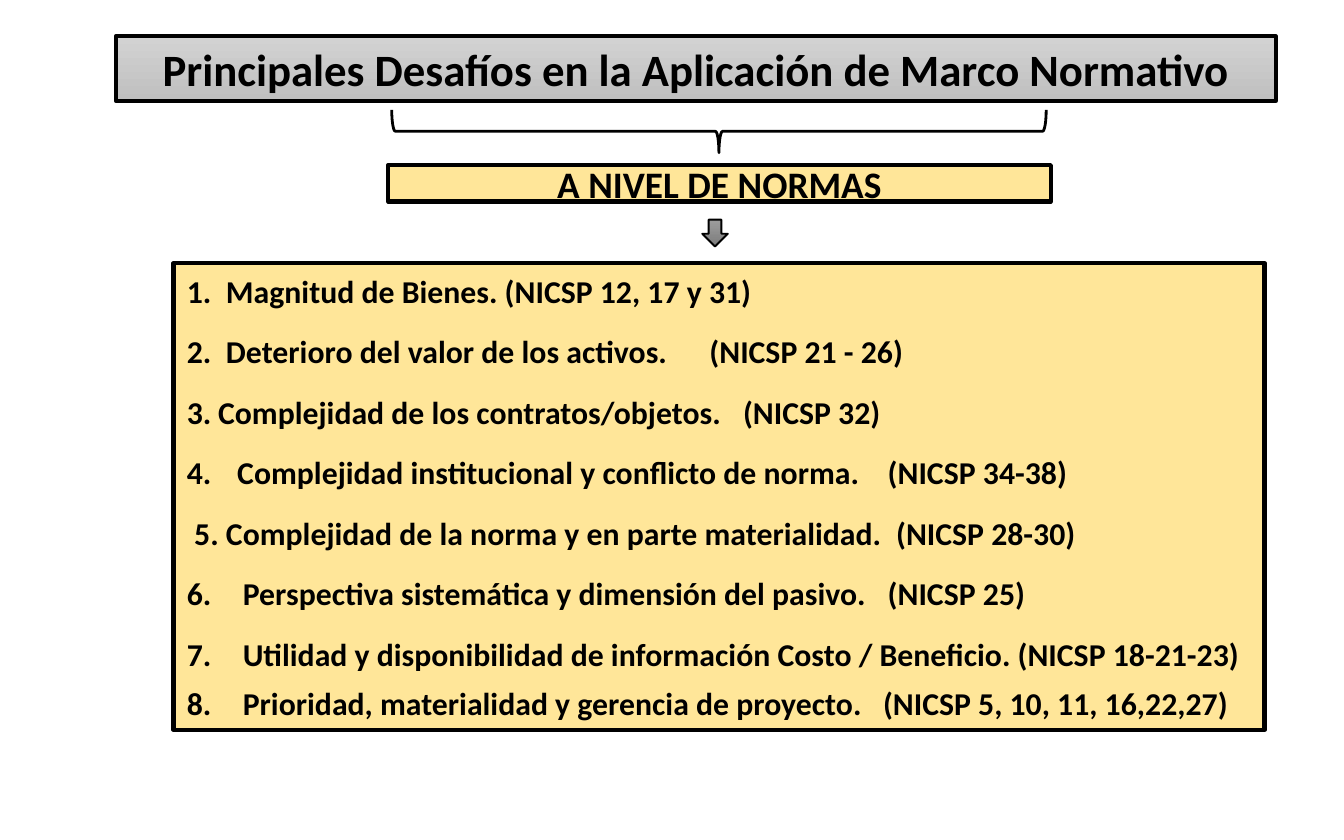
import pptx
import pptx.util
import pptx.dml.color
import pptx.enum.shapes
import pptx.enum.text
from lxml import etree

Pt = pptx.util.Pt
SHAPE = pptx.enum.shapes.MSO_SHAPE
ALIGN = pptx.enum.text.PP_ALIGN
DRAWING_NS = "{http://schemas.openxmlformats.org/drawingml/2006/main}"

BLACK, CREAM = "000000", "FFE699"
BAR_GRADIENT = ("D2D2D2", "C0C0C0")
ARROW_GRADIENT = ("9D9D9D", "7C7C7C")

TITLE = "Principales Desafíos en la Aplicación de Marco Normativo"
LEVEL = "A NIVEL DE NORMAS"
# Each group: text indent, number offset, then (challenge, standards, tab stop or None, space after)
CHALLENGE_GROUPS = [
    (21, 0, [
        ("Magnitud de Bienes.", "(NICSP 12, 17 y 31)", None, 12),
        ("Deterioro del valor de los activos.", "(NICSP 21 - 26)", 280, 12),
    ]),
    (16.75, 0, [("Complejidad de los contratos/objetos.", "(NICSP 32)", 298, 12)]),
    (27, 0, [("Complejidad institucional y conflicto de norma.", "(NICSP 34-38)", 375.5, 12)]),
    (21, 4, [("Complejidad de la norma y en parte materialidad.", "(NICSP 28-30)", 380, 12)]),
    (30, 0, [
        ("Perspectiva sistemática y dimensión del pasivo.", "(NICSP 25)", 375.5, 12),
        ("Utilidad y disponibilidad de información Costo / Beneficio.", "(NICSP 18-21-23)", None, 6),
        ("Prioridad, materialidad y gerencia de proyecto.", "(NICSP 5, 10, 11, 16,22,27)", 373, 6),
    ]),
]


def rgb(color):
    return pptx.dml.color.RGBColor.from_string(color)


def paint(shape, fill=None, line_width=2.25):
    """Fill with a hex colour, a (top, bottom) gradient or nothing, and outline in black."""
    if fill is None:
        shape.fill.background()
    elif isinstance(fill, str):
        shape.fill.solid()
        shape.fill.fore_color.rgb = rgb(fill)
    else:
        shape.fill.gradient()
        shape.fill.gradient_angle = 270
        for stop, color in zip(shape.fill.gradient_stops, fill):
            stop.color.rgb = rgb(color)
    shape.line.color.rgb = rgb(BLACK)
    shape.line.width = Pt(line_width)


def add_shape(slide, kind, left, top, width, height, **look):
    shape = slide.shapes.add_shape(kind, Pt(left), Pt(top), Pt(width), Pt(height))
    shape.shadow.inherit = False
    paint(shape, **look)
    return shape


def write(paragraph, text, size, align=ALIGN.LEFT, after=0):
    paragraph.alignment = align
    paragraph.line_spacing = 1.0
    paragraph.space_before = Pt(0)
    paragraph.space_after = Pt(after)
    run = paragraph.add_run()
    run.text = text
    run.font.name = "Calibri"
    run.font.size = Pt(size)
    run.font.bold = True
    run.font.color.rgb = rgb(BLACK)


def number(paragraph, start, indent, offset, tab):
    properties = paragraph._p.get_or_add_pPr()
    properties.set("marL", str(Pt(indent)))
    properties.set("indent", str(Pt(offset - indent)))
    etree.SubElement(properties, DRAWING_NS + "buFont", typeface="+mj-lt")
    etree.SubElement(properties, DRAWING_NS + "buAutoNum", type="arabicPeriod", startAt=str(start))
    if tab:
        stops = etree.SubElement(properties, DRAWING_NS + "tabLst")
        etree.SubElement(stops, DRAWING_NS + "tab", pos=str(Pt(tab)), algn="l")


def middle_frame(shape):
    frame = shape.text_frame
    frame.word_wrap = True
    frame.auto_size = pptx.enum.text.MSO_AUTO_SIZE.NONE
    frame.vertical_anchor = pptx.enum.text.MSO_ANCHOR.MIDDLE
    return frame


def main():
    deck = pptx.Presentation()
    deck.slide_width, deck.slide_height = Pt(720), Pt(450)
    slide = deck.slides.add_slide(deck.slide_layouts[5])

    title = slide.shapes.title
    title.left, title.top, title.width, title.height = Pt(62), Pt(19.5), Pt(621.5), Pt(34.5)
    paint(title, BAR_GRADIENT)
    write(middle_frame(title).paragraphs[0], TITLE, 24, align=ALIGN.CENTER)

    # The brace is drawn upright and turned so that its point faces down.
    brace = add_shape(slide, SHAPE.LEFT_BRACE, 373.7, -105, 23, 350.6, line_width=1.5)
    brace.rotation = 270

    level = add_shape(slide, SHAPE.RECTANGLE, 208, 88.5, 355, 19.5, fill=CREAM)
    write(middle_frame(level).paragraphs[0], LEVEL, 20, align=ALIGN.CENTER)

    add_shape(slide, SHAPE.DOWN_ARROW, 376.2, 117.7, 13.7, 14.4, fill=ARROW_GRADIENT, line_width=1)

    challenges = add_shape(slide, SHAPE.RECTANGLE, 93, 141, 584.5, 250, fill=CREAM)
    frame = middle_frame(challenges)
    position = 0
    for indent, offset, items in CHALLENGE_GROUPS:
        start = position + 1
        for challenge, standards, tab, after in items:
            paragraph = frame.add_paragraph() if position else frame.paragraphs[0]
            position += 1
            gap = "\t" if tab else " "
            write(paragraph, challenge + gap + standards, 17, after=after)
            number(paragraph, start, indent, offset, tab)

    deck.save("out.pptx")


if __name__ == "__main__":
    main()
